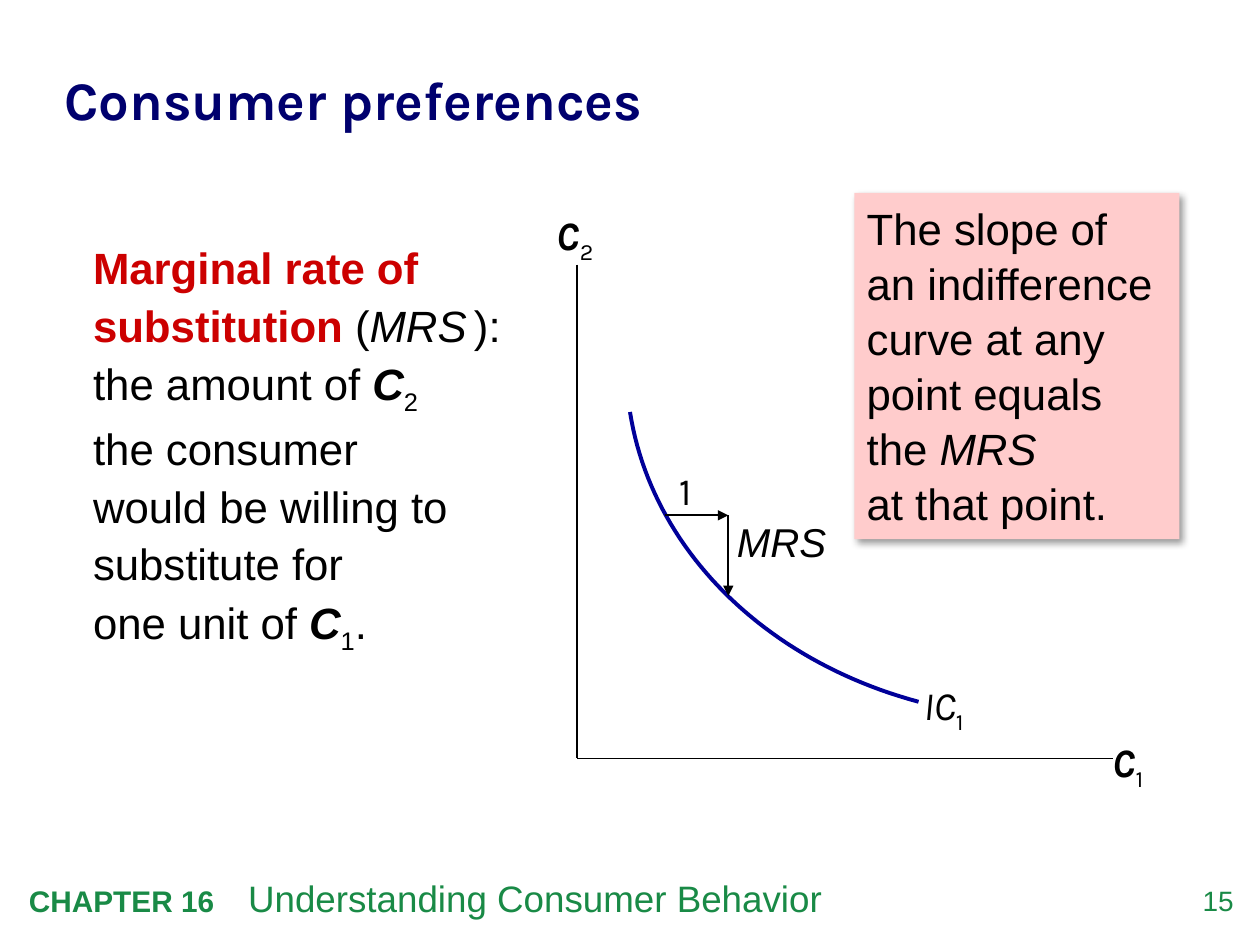
from lxml.etree import SubElement
from pptx import Presentation
from pptx.dml.color import RGBColor
from pptx.enum.shapes import MSO_CONNECTOR, MSO_SHAPE
from pptx.enum.text import MSO_ANCHOR, PP_ALIGN
from pptx.oxml import parse_xml
from pptx.oxml.ns import nsdecls, qn
from pptx.util import Inches, Pt

COLUMNS, ROWS = 100, 75
CELL = Inches(0.1)
COLORS = {
    "title": "00006E",
    "term": "CC0000",
    "ink": "000000",
    "footer": "198A46",
    "curve": "000099",
    "callout": "FFCCCC",
}
BOLD, ITALIC, SUB = {"bold": True}, {"italic": True}, {"sub": True}
SYMBOL = BOLD | ITALIC
TIGHT = (0, 0, 0, 0)
LABEL = (0, 0, 0, 0.05)
PADDED = (0.1, 0.05, 0.1, 0.05)


def cells(*counts):
    """Turn counts of grid cells into lengths."""
    return [round(count * CELL) for count in counts]


def rgb(name):
    """Look up a named colour."""
    return RGBColor.from_string(COLORS[name])


def write(shape, pieces, size, font="Arial", color="ink", insets=PADDED,
          spacing=None, align=PP_ALIGN.LEFT, anchor=MSO_ANCHOR.TOP):
    """Fill a shape with one paragraph of (text, style) pieces."""
    frame = shape.text_frame
    frame.word_wrap = True
    frame.vertical_anchor = anchor
    (frame.margin_left, frame.margin_top,
     frame.margin_right, frame.margin_bottom) = map(Inches, insets)
    paragraph = frame.paragraphs[0]
    paragraph.alignment = align
    paragraph.line_spacing = spacing
    for text, style in pieces:
        for number, line in enumerate(text.split("\n")):
            if number:
                paragraph.add_line_break()
            if not line:
                continue
            run = paragraph.add_run()
            run.text = line
            run.font.name = font
            run.font.size = Pt(style.get("size", size))
            run.font.bold = style.get("bold", False)
            run.font.italic = style.get("italic", False)
            run.font.color.rgb = rgb(style.get("color", color))
            if style.get("sub"):
                run.font._element.set("baseline", "-25000")
    return paragraph


def add_text(slide, place, pieces, size, **layout):
    """Add a text box at a grid place."""
    return write(slide.shapes.add_textbox(*cells(*place)), pieces, size, **layout)


def add_label(slide, place, pieces):
    """Add a label of the diagram."""
    add_text(slide, place, pieces, 23, font="Karla", insets=LABEL)


def add_line(slide, start, end, arrow=False):
    """Add a thin straight line, with an arrowhead at its end if asked."""
    line = slide.shapes.add_connector(MSO_CONNECTOR.STRAIGHT, *cells(*start, *end))
    line.line.color.rgb = rgb("ink")
    line.line.width = Pt(1)
    if arrow:
        SubElement(line.line._get_or_add_ln(), qn("a:tailEnd"), type="triangle")
    SubElement(line._element.spPr, qn("a:effectLst"))


def add_curve(slide, controls, steps=48):
    """Add a cubic curve through four control points."""
    points = []
    for step in range(steps + 1):
        t = step / steps
        weights = ((1 - t) ** 3, 3 * t * (1 - t) ** 2, 3 * t ** 2 * (1 - t), t ** 3)
        points.append(cells(*(sum(w * p for w, p in zip(weights, axis))
                              for axis in zip(*controls))))
    builder = slide.shapes.build_freeform(*points[0], scale=1)
    builder.add_line_segments(points[1:], close=False)
    curve = builder.convert_to_shape()
    curve.shadow.inherit = False
    curve.fill.background()
    curve.line.color.rgb = rgb("curve")
    curve.line.width = Pt(2.25)


def add_callout(slide, place, pieces):
    """Add the tinted note with its soft shadow."""
    callout = slide.shapes.add_shape(MSO_SHAPE.RECTANGLE, *cells(*place))
    callout.fill.solid()
    callout.fill.fore_color.rgb = rgb("callout")
    callout.line.fill.background()
    callout.shadow.inherit = False
    callout._element.spPr.find(qn("a:effectLst")).append(parse_xml(
        f'<a:outerShdw {nsdecls("a")} blurRad="{Pt(4)}" dist="{Pt(3)}" dir="2700000" '
        f'algn="tl" rotWithShape="0"><a:srgbClr val="{COLORS["ink"]}">'
        '<a:alpha val="40000"/></a:srgbClr></a:outerShdw>'))
    write(callout, pieces, 25, spacing=1.05)


def add_footer(slide):
    """Add the page number and the chapter line."""
    add_text(slide, (92.4, 70.1, 5.5, 3.2), [("15", {})], 16, color="footer",
             insets=TIGHT, align=PP_ALIGN.RIGHT)
    chapter = add_text(slide, (1.3, 69, 81.8, 4.5), [
        ("CHAPTER 16\t", BOLD | {"size": 17}),
        ("Understanding Consumer Behavior", {}),
    ], 21, color="footer")
    stops = SubElement(chapter._p.get_or_add_pPr(), qn("a:tabLst"))
    SubElement(stops, qn("a:tab"), pos=str(Inches(1.74)), algn="l")


def add_diagram(slide):
    """Draw the axes, the indifference curve and the step along it."""
    origin = (45.8, 60.2)
    start, corner, landing = (52.8, 40.9), (57.8, 40.9), (57.8, 47.3)
    add_line(slide, (45.8, 21), origin)
    add_line(slide, origin, (88.3, 60.2))
    add_label(slide, (88.3, 58.5, 4.2, 4.3), [("C", SYMBOL), ("1", SUB)])
    add_label(slide, (44.2, 16.7, 4.2, 4.3), [("C", SYMBOL), ("2", SUB)])
    add_curve(slide, [(72.9, 55.7), (60.6, 52.4), (51.7, 43.5), (50, 32.7)])
    add_label(slide, (73.3, 54, 5.8, 4.3), [("IC", ITALIC), ("1", SUB)])
    add_line(slide, start, corner, arrow=True)
    add_line(slide, corner, landing, arrow=True)
    add_text(slide, (52.9, 36.6, 3.4, 4.7), [("1", {})], 22, font="Karla")
    add_text(slide, (57.5, 40.6, 11.7, 4.8), [("MRS", ITALIC)], 23)


def main():
    """Build the slide and save it."""
    deck = Presentation()
    deck.slide_width, deck.slide_height = cells(COLUMNS, ROWS)
    slide = deck.slides.add_slide(deck.slide_layouts[6])
    add_footer(slide)
    add_text(slide, (5.1, 2.6, 90.2, 10.3), [("Consumer preferences", BOLD)], 31,
             font="Karla", color="title", insets=TIGHT, spacing=1.05,
             anchor=MSO_ANCHOR.MIDDLE)
    add_text(slide, (6.4, 18.2, 35.8, 33.9), [
        ("Marginal rate of substitution ", BOLD | {"color": "term"}),
        ("(", {}),
        ("MRS", ITALIC),
        (" ", ITALIC | {"size": 15}),
        ("): the amount of ", {}),
        ("C", SYMBOL),
        ("2", SUB),
        ("\nthe consumer\nwould be willing to substitute for\none unit of ", {}),
        ("C", SYMBOL),
        ("1", SUB),
        (".", {}),
    ], 25, spacing=1.1)
    add_diagram(slide)
    add_callout(slide, (67.8, 15.3, 25.8, 27.5), [
        ("The slope of an indifference curve at any point equals the ", {}),
        ("MRS", ITALIC),
        ("\nat that point.", {}),
    ])
    deck.save("out.pptx")


if __name__ == "__main__":
    main()
